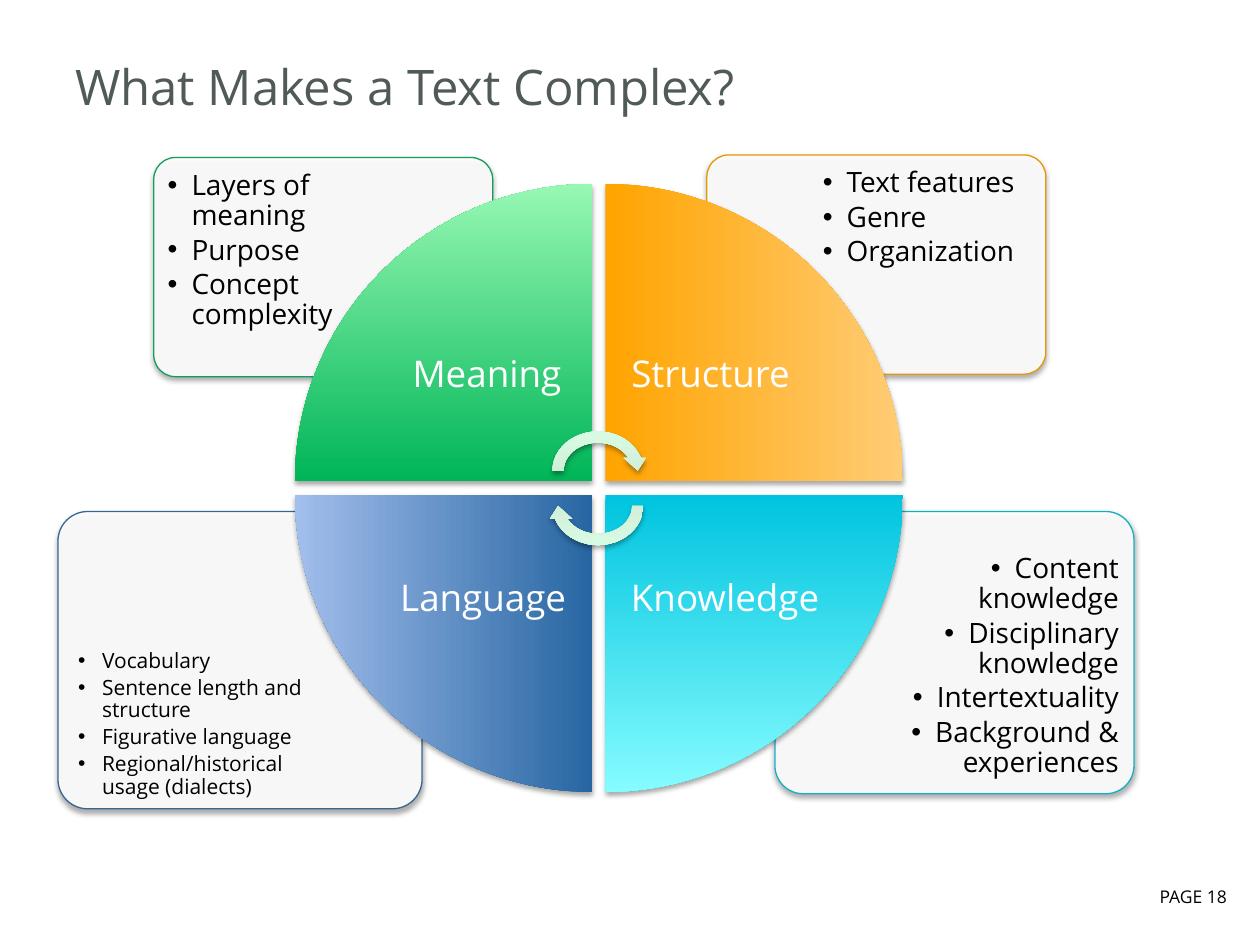
from lxml import etree
from pptx import Presentation
from pptx.dml.color import RGBColor
from pptx.enum import shapes, text
from pptx.oxml.ns import qn
from pptx.util import Inches, Pt

# Content
TITLE = "What Makes a Text Complex?"
PAGE = "PAGE 18 "
COLORS = {"title": "505B56", "text": "000000", "white": "FFFFFF",
          "arrow": ("C6E2CE", "D9FCE4")}
FONT = "Open Sans"
LEFT, RIGHT = text.PP_ALIGN.LEFT, text.PP_ALIGN.RIGHT
TOP, MIDDLE, BOTTOM = (text.MSO_ANCHOR.TOP, text.MSO_ANCHOR.MIDDLE,
                       text.MSO_ANCHOR.BOTTOM)

# Cards: outline colour, card box, text box, size, alignment, anchor, bullets
CARDS = [
    ("13B0C5", (6.15, 4.06, 2.85, 2.24), (7.05, 4.73, 1.9, 1.52), 16, RIGHT, BOTTOM,
     ["Content knowledge", "Disciplinary knowledge", "Intertextuality",
      "Background & experiences"]),
    ("366694", (0.46, 4.06, 2.89, 2.36), (0.55, 4.46, 1.93, 1.95), 12, LEFT, BOTTOM,
     ["Vocabulary", "Sentence length and structure", "Figurative language",
      "Regional/historical usage (dialects)"]),
    ("E29905", (5.61, 1.23, 2.69, 1.74), (6.46, 1.27, 1.81, 1.23), 16, LEFT, TOP,
     ["Text features", "Genre", "Organization"]),
    ("12A059", (1.22, 1.25, 2.69, 1.74), (1.26, 1.29, 1.81, 1.23), 16, LEFT, TOP,
     ["Layers of meaning", "Purpose", "Concept complexity"]),
]

# Quadrants, clockwise from top left: label, gradient, label width, column, row
QUADRANTS = [
    ("Meaning", ("00B558", "97F8B3"), 1.67, 0, 0),
    ("Structure", ("FFA400", "FFCC75"), 1.67, 1, 0),
    ("Knowledge", ("00C4DF", "85FCFF"), 1.9, 1, 1),
    ("Language", ("2766A2", "A2BEEC"), 1.73, 0, 1),
]
WHEEL_X, WHEEL_Y, RADIUS, STEP = 2.34, 1.46, 2.36, 2.465
LABEL_H = 1.67

prs = Presentation()
prs.slide_width, prs.slide_height = Inches(10), Inches(7.5)
slide = prs.slides.add_slide(prs.slide_layouts[6])


def inches(box):
    return [Inches(v) for v in box]


def add_child(parent, tag, **attrs):
    return etree.SubElement(parent, qn(tag), attrs)


def add_text(box, lines, size, color, align=LEFT, anchor=TOP,
             inset=(0.1, 0.05), spacing=None, bullets=False):
    tf = slide.shapes.add_textbox(*inches(box)).text_frame
    tf.word_wrap = True
    tf.vertical_anchor = anchor
    tf.margin_left = tf.margin_right = Inches(inset[0])
    tf.margin_top = tf.margin_bottom = Inches(inset[1])
    for i, line in enumerate(lines):
        p = tf.add_paragraph() if i else tf.paragraphs[0]
        if bullets:
            pPr = p._p.get_or_add_pPr()
            pPr.set("marL", str(Inches(0.19)))
            pPr.set("indent", str(Inches(-0.19)))
            add_child(add_child(pPr, "a:buClr"), "a:srgbClr", val=color)
            add_child(pPr, "a:buFont", typeface="Arial")
            add_child(pPr, "a:buChar", char="•")
        p.alignment = align
        if spacing:
            p.line_spacing = spacing
        if i:
            p.space_before = Pt(2.4)
        r = p.add_run()
        r.text = line
        r.font.name, r.font.size = FONT, Pt(size)
        r.font.color.rgb = RGBColor.from_string(color)


def add_shape(kind, box, rotation=0):
    """Preset shape with the soft shadow shared by the whole diagram."""
    sp = slide.shapes.add_shape(kind, *inches(box))
    sp.rotation = rotation
    sp.shadow.inherit = False
    effects = sp._element.spPr.find(qn("a:effectLst"))
    shadow = add_child(effects, "a:outerShdw", blurRad=str(Pt(3.1)),
                       dist=str(Pt(1.8)), dir="5400000", rotWithShape="0")
    add_child(add_child(shadow, "a:srgbClr", val="000000"), "a:alpha", val="35000")
    return sp


def add_gradient_shape(kind, box, rotation, colors):
    sp = add_shape(kind, box, rotation)
    sp.line.fill.background()
    sp.fill.gradient()
    sp.fill.gradient_angle = 90
    for stop, position, color in zip(sp.fill.gradient_stops, (0, 1), colors):
        stop.position = position
        stop.color.rgb = RGBColor.from_string(color)


# Title and page number
add_text((8.28, 6.98, 1.59, 0.27), [PAGE], 10, COLORS["text"], RIGHT)
add_text((0.5, 0.06, 9, 1.25), [TITLE], 28, COLORS["title"], anchor=MIDDLE)

# Corner cards with bullet lists
for outline, card, box, size, align, anchor, bullets in CARDS:
    sp = add_shape(shapes.MSO_SHAPE.ROUNDED_RECTANGLE, card)
    sp.adjustments[0] = 0.1
    sp.fill.solid()
    sp.fill.fore_color.rgb = RGBColor.from_string(COLORS["white"])
    fill = sp._element.spPr.find(qn("a:solidFill"))
    add_child(fill[0], "a:alpha", val="90000")
    sp.line.color.rgb = RGBColor.from_string(outline)
    sp.line.width = Pt(0.75)
    add_text(box, bullets, size, COLORS["text"], align, anchor,
             (0.07, 0.07), 0.9, bullets=True)

# Wheel quadrants, labels set against the inner edges
for i, (label, colors, width, col, row) in enumerate(QUADRANTS):
    x, y = WHEEL_X + col * STEP, WHEEL_Y + row * STEP
    add_gradient_shape(shapes.MSO_SHAPE.PIE_WEDGE, (x, y, RADIUS, RADIUS),
                       90 * i, colors)
    label_x = x if col else x + RADIUS - width
    label_y = y if row else y + RADIUS - LABEL_H
    add_text((label_x, label_y, width, LABEL_H), [label], 21, COLORS["white"],
             text.PP_ALIGN.CENTER, MIDDLE, (0.16, 0.16), 0.9)

# Cycle arrows at the hub
for y, rotation in ((3.38, 0), (3.66, 180)):
    add_gradient_shape(shapes.MSO_SHAPE.CIRCULAR_ARROW, (4.34, y, 0.81, 0.71),
                       rotation, COLORS["arrow"])

prs.save("out.pptx")
